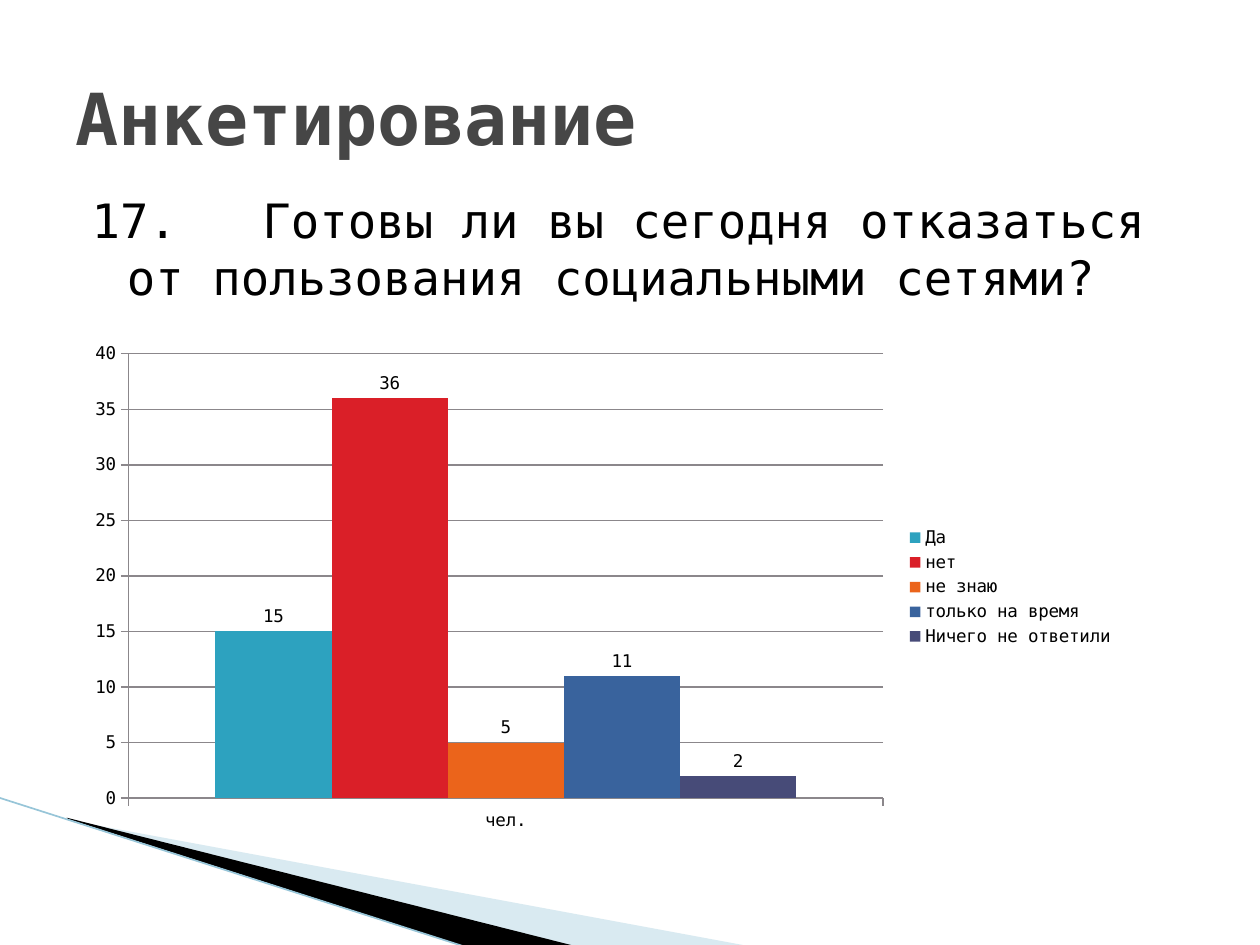
from lxml.etree import SubElement
from pptx import Presentation
from pptx.chart.data import CategoryChartData
from pptx.dml.color import RGBColor as Color
from pptx.enum.chart import XL_CHART_TYPE as ChartType
from pptx.enum.chart import XL_LABEL_POSITION as LabelPosition
from pptx.enum.chart import XL_LEGEND_POSITION as LegendPosition
from pptx.enum.chart import XL_TICK_MARK as TickMark
from pptx.enum.shapes import MSO_CONNECTOR as Connector
from pptx.enum.text import MSO_ANCHOR as Anchor
from pptx.enum.text import PP_ALIGN as Align
from pptx.oxml.ns import qn
from pptx.util import Inches, Pt

THEME = {
    "font": "DejaVu Sans Mono",
    "title": {"size": Pt(41), "bold": True, "color": "464646"},
    "body": {"size": Pt(27), "bold": False, "color": "000000"},
    "chart": {"size": Pt(10), "bold": False, "color": "000000"},
    "grid": "8B878B",
    "edge": "97C5D8",
    "pale": "A0CBDC",
    "dark": "000000",
}

presentation = Presentation()
presentation.slide_width = Inches(10)
presentation.slide_height = Inches(7.5)
COLUMN = presentation.slide_width // 100
ROW = presentation.slide_height // 75


def format_font(font, role):
    font.name = THEME["font"]
    for name, value in THEME[role].items():
        if name == "color":
            font.color.rgb = Color.from_string(value)
        else:
            setattr(font, name, value)


def area(left, top, width, height):
    return [round(length) for length in
            (left * COLUMN, top * ROW, width * COLUMN, height * ROW)]


slide = presentation.slides.add_slide(presentation.slide_layouts[5])

wedges = [
    ("pale", 40, [(55, 651), (595, 751), (456, 751), (55, 650)]),
    ("dark", 100, [(53, 649), (457, 751), (372, 752), (54, 650)]),
]
for color, opacity, points in wedges:
    builder = slide.shapes.build_freeform(*points[0], scale=COLUMN / 10)
    builder.add_line_segments(points[1:], close=True)
    wedge = builder.convert_to_shape()
    wedge.shadow.inherit = False
    wedge.fill.solid()
    wedge.fill.fore_color.rgb = Color.from_string(THEME[color])
    wedge.line.fill.background()
    if opacity < 100:
        fill_color = wedge.fill._xPr.find(qn("a:solidFill"))[0]
        SubElement(fill_color, qn("a:alpha"), val=str(opacity * 1000))

edge = slide.shapes.add_connector(
    Connector.STRAIGHT, *area(-0.1, 63.3, 37.1, 75.2))
edge.line.color.rgb = Color.from_string(THEME["edge"])
edge.line.width = Pt(0.95)
SubElement(edge._element.spPr, qn("a:effectLst"))

title = slide.shapes.title
question = slide.shapes.add_textbox(*area(5.1, 14.7, 90, 49.5))
texts = [
    (title, "title", "Анкетирование", Anchor.MIDDLE, area(5, 3, 90, 12.5)),
    (question, "body",
     "17.   Готовы ли вы сегодня отказаться от пользования социальными сетями?",
     Anchor.TOP, area(5.1, 14.7, 90, 49.5)),
]
for shape, role, text, anchor, box in texts:
    for name, value in zip(("left", "top", "width", "height"), box):
        setattr(shape, name, value)
    frame = shape.text_frame
    frame.word_wrap = True
    frame.vertical_anchor = anchor
    frame.text = text
    paragraph = frame.paragraphs[0]
    paragraph.alignment = Align.LEFT
    format_font(paragraph.runs[0].font, role)

hanging = question.text_frame.paragraphs[0]._p.get_or_add_pPr()
hanging.set("marL", str(Inches(0.4)))
hanging.set("indent", str(Inches(-0.28)))

answers = [
    ("Да", 15, "2DA2BF"),
    ("нет", 36, "DA1F28"),
    ("не знаю", 5, "EB641B"),
    ("только на время", 11, "39639D"),
    ("Ничего не ответили", 2, "474B78"),
]
chart_data = CategoryChartData()
chart_data.categories = ["чел."]
for answer, count, _ in answers:
    chart_data.add_series(answer, [count])
chart = slide.shapes.add_chart(
    ChartType.COLUMN_CLUSTERED, *area(5.9, 26.5, 83.5, 40.2), chart_data).chart
format_font(chart.font, "chart")
chart.has_title = False
chart.has_legend = True
chart.legend.position = LegendPosition.RIGHT
chart.legend.include_in_layout = False

plot = chart.plots[0]
for name, value in {"gap_width": 150, "overlap": 0,
                    "vary_by_categories": False}.items():
    setattr(plot, name, value)
for series, (_, _, color) in zip(plot.series, answers):
    series.format.fill.solid()
    series.format.fill.fore_color.rgb = Color.from_string(color)
    series.data_labels.show_value = True
    series.data_labels.position = LabelPosition.OUTSIDE_END

value_axis = chart.value_axis
for name, value in {"minimum_scale": 0, "maximum_scale": 40, "major_unit": 5,
                    "has_major_gridlines": True}.items():
    setattr(value_axis, name, value)
for axis in (chart.category_axis, value_axis):
    axis.major_tick_mark = TickMark.OUTSIDE
for part in (chart.category_axis, value_axis, value_axis.major_gridlines):
    part.format.line.color.rgb = Color.from_string(THEME["grid"])
    part.format.line.width = Pt(0.75)

presentation.save("out.pptx")
